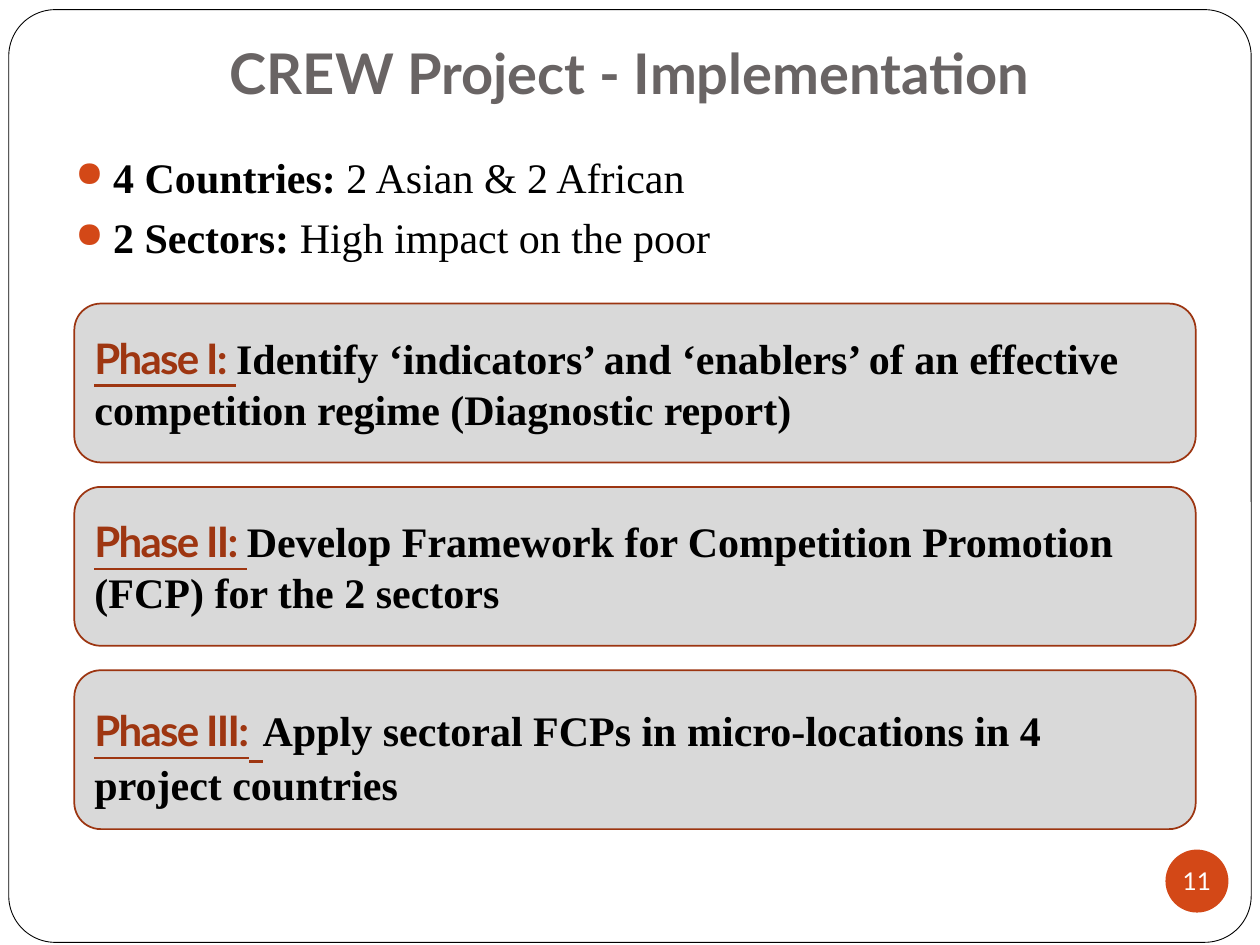
import pptx
import pptx.util
import pptx.dml.color
import pptx.enum.shapes
import pptx.enum.text
import pptx.oxml.ns
import lxml.etree

Pt = pptx.util.Pt
SHAPES = pptx.enum.shapes.MSO_SHAPE
ALIGN = pptx.enum.text.PP_ALIGN
ANCHOR = pptx.enum.text.MSO_ANCHOR
COLOURS = {
    "paper": "FFFFFF", "frame": "000000", "title": "696464", "text": "000000",
    "accent": "D34817", "panel": "D9D9D9", "edge": "9C3511", "label": "9E3611",
}
HEADING, BODY = "Lato", "Times New Roman"
FACTS = [("4 Countries:", " 2 Asian & 2 African"),
         ("2 Sectors: ", "High impact on the poor")]
PHASES = [
    ("Phase I:", 24, "Identify ‘indicators’ and ‘enablers’ of an effective "
     "competition regime (Diagnostic report)"),
    ("Phase II:", 24, "Develop Framework for Competition Promotion (FCP) "
     "for the 2 sectors"),
    ("Phase III:", 32, "Apply sectoral FCPs in micro-locations in 4 project countries"),
]


def colour(name):
    """Return the named colour of the palette."""
    return pptx.dml.color.RGBColor.from_string(COLOURS[name])


def set_font(font, name, size, tint, bold=False):
    """Set the face, size, colour and weight of a font."""
    font.name, font.size, font.bold = name, Pt(size), bold
    font.color.rgb = colour(tint)


def add_panel(page, kind, box, fill, line=None, width=1):
    """Add a flat preset shape with an optional outline."""
    panel = page.shapes.add_shape(kind, *map(Pt, box))
    panel.shadow.inherit = False
    panel.fill.solid()
    panel.fill.fore_color.rgb = colour(fill)
    if line:
        panel.line.color.rgb = colour(line)
        panel.line.width = Pt(width)
    else:
        panel.line.fill.background()
    return panel


def add_frame(page, box):
    """Add the rounded outline around the page."""
    frame = add_panel(page, SHAPES.ROUNDED_RECTANGLE, box, "paper", "frame", 0.5)
    frame.adjustments[0] = 0.05


def add_title(page, box, text):
    """Add the centred page title."""
    frame = page.shapes.add_textbox(*map(Pt, box)).text_frame
    frame.word_wrap = True
    frame.vertical_anchor = ANCHOR.BOTTOM
    frame.margin_bottom = Pt(7.2)
    para = frame.paragraphs[0]
    para.text, para.alignment = text, ALIGN.CENTER
    set_font(para.font, HEADING, 32, "title", True)


def add_bullet(para, indent):
    """Give a paragraph a hanging round bullet in the accent colour."""
    props = para._p.get_or_add_pPr()
    props.set("marL", str(Pt(indent)))
    props.set("indent", str(-Pt(indent)))
    qn = pptx.oxml.ns.qn
    tint = lxml.etree.SubElement(props, qn("a:buClr"))
    lxml.etree.SubElement(tint, qn("a:srgbClr"), val=COLOURS["accent"])
    lxml.etree.SubElement(props, qn("a:buSzPct"), val="85000")
    lxml.etree.SubElement(props, qn("a:buChar"), char="●")


def add_facts(page, box, facts):
    """Add the bulleted facts, each with a bold lead."""
    frame = page.shapes.add_textbox(*map(Pt, box)).text_frame
    frame.word_wrap = True
    for index, parts in enumerate(facts):
        para = frame.add_paragraph() if index else frame.paragraphs[0]
        para.space_before = Pt(5.8)
        add_bullet(para, 21.6)
        for text, bold in zip(parts, (True, False)):
            span = para.add_run()
            span.text = text
            set_font(span.font, BODY, 24, "text", bold)


def add_phase(page, box, label, gap_size, text):
    """Add one phase panel with an underlined label and its aim."""
    panel = add_panel(page, SHAPES.ROUNDED_RECTANGLE, box, "panel", "edge")
    frame = panel.text_frame
    frame.word_wrap = True
    frame.vertical_anchor = ANCHOR.MIDDLE
    para = frame.paragraphs[0]
    para.alignment = ALIGN.LEFT
    for words, size in ((label, 24), (" ", gap_size)):
        span = para.add_run()
        span.text = words
        set_font(span.font, HEADING, size, "label", True)
        span.font.underline = True
        span._r.get_or_add_rPr().set("spc", "-100")
    span = para.add_run()
    span.text = text
    set_font(span.font, BODY, 24, "text", True)


def add_phases(page, box, phases, gap):
    """Stack equal phase panels down the box."""
    left, top, width, height = box
    each = (height - gap * (len(phases) - 1)) / len(phases)
    for index, phase in enumerate(phases):
        add_phase(page, (left, top + index * (each + gap), width, each), *phase)


def add_page_number(page, box, number):
    """Add the page number in its disc."""
    frame = add_panel(page, SHAPES.OVAL, box, "accent").text_frame
    frame.margin_left = frame.margin_right = 0
    frame.margin_top = frame.margin_bottom = 0
    frame.word_wrap = False
    frame.vertical_anchor = ANCHOR.MIDDLE
    para = frame.paragraphs[0]
    para.text, para.alignment = str(number), ALIGN.CENTER
    set_font(para.font, HEADING, 14, "paper")


def main():
    """Build the slide and save it."""
    deck = pptx.Presentation()
    deck.slide_width, deck.slide_height = Pt(720), Pt(540)
    page = deck.slides.add_slide(deck.slide_layouts[6])
    add_frame(page, (5, 5.5, 710, 533))
    add_title(page, (36, 15, 648, 52.5), "CREW Project - Implementation")
    add_page_number(page, (666, 485.5, 36, 36), 11)
    add_facts(page, (36, 82.8, 648, 410.4), FACTS)
    add_phases(page, (42.5, 173.5, 640.8, 300.3), PHASES, 14)
    deck.save("out.pptx")


if __name__ == "__main__":
    main()
